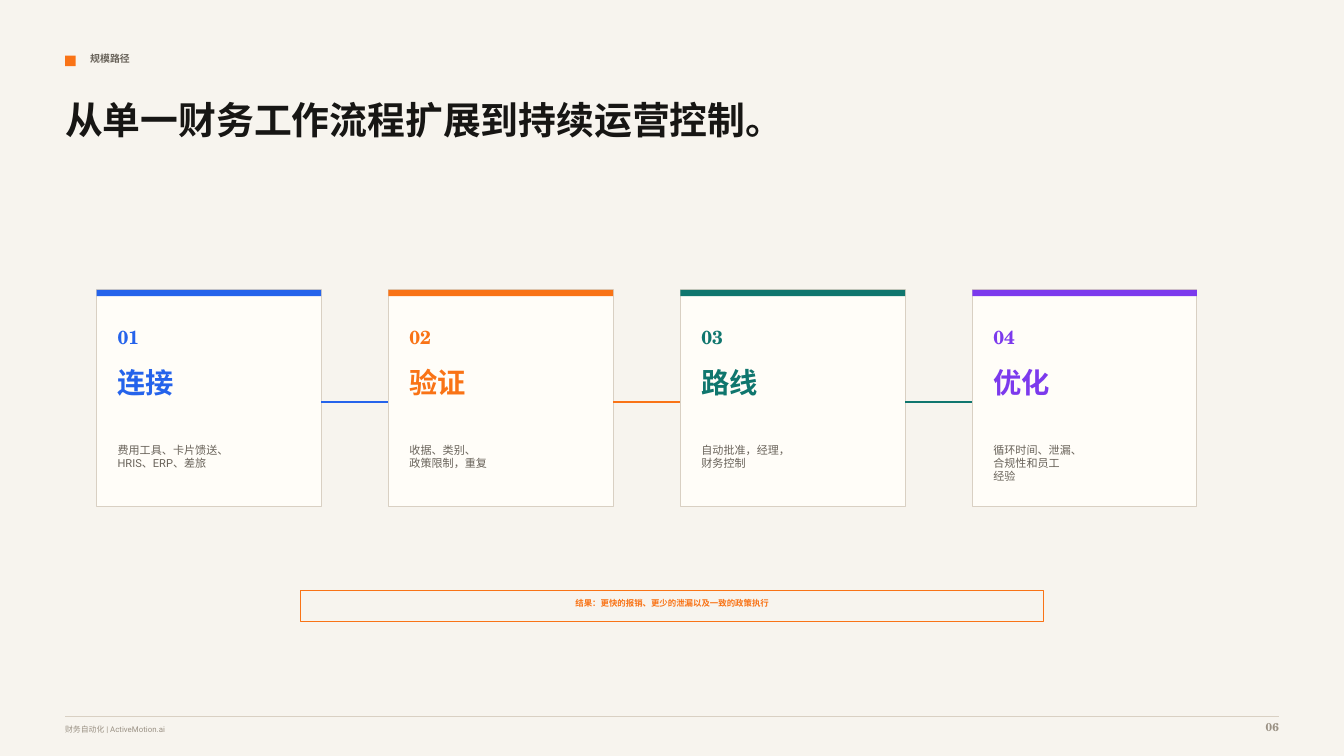
import pptx
import pptx.util
import pptx.dml.color
import pptx.enum.shapes
import pptx.enum.text
import pptx.oxml.ns
import lxml.etree

COLS, ROWS = 1280, 720
WIDTH, HEIGHT = pptx.util.Inches(13.333), pptx.util.Inches(7.5)
SANS, SERIF = "Roboto", "TeX Gyre Schola"
LEFT, RIGHT = 62, 1218
ALIGN = pptx.enum.text.PP_ALIGN
COLORS = {
    "paper": "F7F4EE", "card": "FFFDF8", "rule": "D9D0C3",
    "ink": "171614", "body": "69635A", "muted": "9A9184",
    "blue": "2563EB", "orange": "F97316", "green": "0F766E", "violet": "7C3AED",
}
STEPS = [
    ("连接", "blue", ["费用工具、卡片馈送、", "HRIS、ERP、差旅"]),
    ("验证", "orange", ["收据、类别、", "政策限制，重复"]),
    ("路线", "green", ["自动批准，经理，", "财务控制"]),
    ("优化", "violet", ["循环时间、泄漏、", "合规性和员工", "经验"]),
]


def rgb(name):
    return pptx.dml.color.RGBColor.from_string(COLORS[name])


def grid(x, y, w, h):
    """Turn columns and rows into slide lengths."""
    return (int(x * WIDTH / COLS), int(y * HEIGHT / ROWS),
            int(w * WIDTH / COLS), int(h * HEIGHT / ROWS))


def add_rect(s, box, fill=None, line=None):
    sp = s.shapes.add_shape(pptx.enum.shapes.MSO_SHAPE.RECTANGLE, *grid(*box))
    sp.shadow.inherit = False
    if fill:
        sp.fill.solid()
        sp.fill.fore_color.rgb = rgb(fill)
    else:
        sp.fill.background()
    if line:
        sp.line.color.rgb = rgb(line)
        sp.line.width = pptx.util.Pt(0.75)
    else:
        sp.line.fill.background()


def add_rule(s, x, y, length, color, width):
    """Draw a horizontal line."""
    left, top, span, _ = grid(x, y, length, 0)
    line = s.shapes.add_connector(
        pptx.enum.shapes.MSO_CONNECTOR.STRAIGHT, left, top, left + span, top)
    line.line.color.rgb = rgb(color)
    line.line.width = pptx.util.Pt(width)
    lxml.etree.SubElement(line._element.spPr, pptx.oxml.ns.qn("a:effectLst"))


def add_text(s, box, *lines, size, color, font=SANS, bold=False,
             align=ALIGN.LEFT, sp=None):
    """Write one paragraph per line in sp, or in a new text box."""
    place = grid(*box)
    sp = sp or s.shapes.add_textbox(*place)
    sp.left, sp.top, sp.width, sp.height = place
    tf = sp.text_frame
    tf.word_wrap = True
    tf.auto_size = pptx.enum.text.MSO_AUTO_SIZE.NONE
    tf.vertical_anchor = pptx.enum.text.MSO_ANCHOR.TOP
    tf.margin_left = tf.margin_top = tf.margin_right = tf.margin_bottom = 0
    for i, line in enumerate(lines):
        p = tf.add_paragraph() if i else tf.paragraphs[0]
        p.alignment = align
        r = p.add_run()
        r.text = line
        r.font.name, r.font.bold = font, bold
        r.font.size = pptx.util.Pt(size)
        r.font.color.rgb = rgb(color)


def add_header(s, x, y):
    add_rect(s, (x, y + 3, 10, 10), fill="orange")
    add_text(s, (x + 24, y, 560, 18), "规模路径", size=7.1, color="body", bold=True)
    add_text(s, (x, y + 42, 950, 98), "从单一财务工作流程扩展到持续运营控制。",
             size=27, color="ink", font=SERIF, bold=True, sp=s.shapes.title)


def add_card(s, box, number, word, color, detail):
    x, y, w, h = box
    inner = x + 20
    accent = {"color": color, "font": SERIF, "bold": True}
    add_rect(s, box, fill="card", line="rule")
    add_rect(s, (x, y, w, 6), fill=color)
    add_text(s, (inner, y + 34, 44, 24), f"{number:02}", size=13.5, **accent)
    add_text(s, (inner, y + 72, 160, 44), word, size=20.2, **accent)
    add_text(s, (inner, y + 146, 166, 44), *detail, size=7.9, color="body")


def add_steps(s, box, gap):
    x, y, w, h = box
    card_w = (w + gap) / len(STEPS) - gap
    for i, (word, color, detail) in enumerate(STEPS):
        left = x + i * (card_w + gap)
        add_card(s, (left, y, card_w, h), i + 1, word, color, detail)
        if i < len(STEPS) - 1:
            add_rule(s, left + card_w, y + 107, gap, color, 1.5)


def add_result(s, box):
    x, y, w, h = box
    add_rect(s, box, line="orange")
    add_text(s, (x + 12, y + 8, w - 24, 14), "结果：更快的报销、更少的泄漏以及一致的政策执行",
             size=6, color="orange", bold=True, align=ALIGN.CENTER)


def add_footer(s, x, y, w):
    add_rule(s, x, y, w, "rule", 0.75)
    add_text(s, (x, y + 8, 760, 14), "财务自动化 | ActiveMotion.ai",
             size=5.6, color="muted")
    add_text(s, (x + w - 48, y + 4, 48, 18), "06", size=8.2, color="muted",
             font=SERIF, bold=True, align=ALIGN.RIGHT)


def main():
    prs = pptx.Presentation()
    prs.slide_width, prs.slide_height = WIDTH, HEIGHT
    s = prs.slides.add_slide(prs.slide_layouts.get_by_name("Title Only"))
    s.background.fill.solid()
    s.background.fill.fore_color.rgb = rgb("paper")
    add_header(s, LEFT, 50)
    add_steps(s, (92, 276, 1048, 206), gap=64)
    add_result(s, (286, 562, 708, 30))
    add_footer(s, LEFT, 682, RIGHT - LEFT)
    prs.save("out.pptx")


if __name__ == "__main__":
    main()
